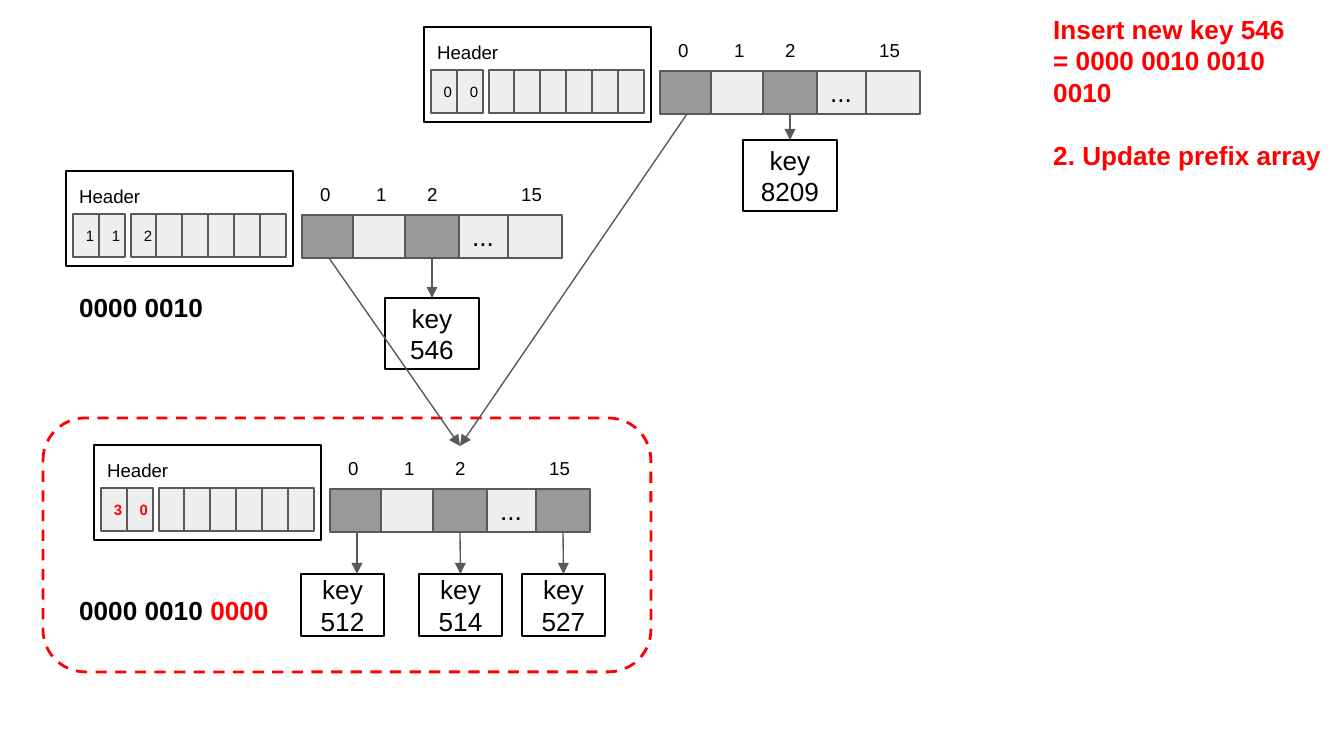
from lxml.etree import SubElement
from pptx import Presentation
from pptx.dml.color import RGBColor
from pptx.enum.dml import MSO_LINE
from pptx.enum.shapes import MSO_CONNECTOR, MSO_SHAPE
from pptx.enum.text import MSO_ANCHOR, PP_ALIGN
from pptx.oxml.ns import qn
from pptx.util import Emu, Inches, Pt

C = {"black": "000000", "red": "FF0000", "edge": "595959",
     "empty": "EEEEEE", "used": "999999"}
INSET = Inches(0.1)
FRAME = {"word_wrap": True, "margin_left": INSET, "margin_right": INSET,
         "margin_top": INSET, "margin_bottom": INSET}


def px(n):
    return Emu(round(n * 914400 / 134.4))


def box(at, paras=(), size=14, color="black", bold=False, fill=None,
        line=None, center=False, shape=MSO_SHAPE.RECTANGLE):
    """Add a shape, or a text box when it has no line; paras hold (text, color) runs."""
    at = [px(n) for n in at]
    if line:
        sp = s.shapes.add_shape(shape, *at)
        sp.shadow.inherit = False
        sp.line.color.rgb = RGBColor.from_string(C[line])
        sp.line.width = Pt(0.75)
        if fill:
            sp.fill.solid()
            sp.fill.fore_color.rgb = RGBColor.from_string(C[fill])
        else:
            sp.fill.background()
    else:
        sp = s.shapes.add_textbox(*at)
    tf = sp.text_frame
    for name, value in FRAME.items():
        setattr(tf, name, value)
    tf.vertical_anchor = MSO_ANCHOR.MIDDLE if center else MSO_ANCHOR.TOP
    for i, para in enumerate(paras):
        p = tf.add_paragraph() if i else tf.paragraphs[0]
        p.alignment = PP_ALIGN.CENTER if center else PP_ALIGN.LEFT
        for text, run_color in [(para, color)] if isinstance(para, str) else para:
            r = p.add_run()
            r.text = text
            for name, value in {"name": "Arial", "size": Pt(size), "bold": bold}.items():
                setattr(r.font, name, value)
            r.font.color.rgb = RGBColor.from_string(C[run_color])
    return sp


prs = Presentation()
prs.slide_width, prs.slide_height = px(1344), px(756)
s = prs.slides.add_slide(prs.slide_layouts[6])

highlight = box((43, 418, 608, 254), line="red", shape=MSO_SHAPE.ROUNDED_RECTANGLE)
highlight.line.width = Pt(1.5)
highlight.line.dash_style = MSO_LINE.DASH

# Tree nodes: left, top, counters, prefix, counter colour, slots in use
NODES = {
    "root": (424, 27, "00", "", "black", (0, 2)),
    "middle": (66, 171, "11", "2", "black", (0, 2)),
    "leaf": (94, 445, "30", "", "red", (0, 2, 4)),
}
# Index labels: slot -> text, offset from the node, width
LABELS = {0: ("0", 241, 36), 1: ("1", 297, 36), 2: ("2", 348, 36), 4: ("15", 442, 54)}
slots, labels = {}, {}
for node, (x, y, counters, prefix, color, used) in NODES.items():
    box((x, y, 227, 95), ["Header"], size=10, line="black")
    for i, text in enumerate(counters):
        box((x + 7 + 26 * i, y + 43, 26, 43), [text], size=8, color=color,
            bold=color == "red", fill="empty", line="edge", center=True)
    for i, text in enumerate(prefix.ljust(6)):
        box((x + 65 + 129 * i // 5, y + 43, 26, 43), [text] if text.strip() else [],
            size=8, fill="empty", line="edge", center=True)
    for i in (3, 0, 1, 2, 4):  # the ellipsis lies beneath its neighbours
        slots[node, i] = box((x + 236 + 103 * i // 2, y + 44, 54, 43),
                             ["..."] if i == 3 else [], line="edge", center=True,
                             fill="used" if i in used else "empty")
    for i, (text, dx, width) in LABELS.items():
        labels[node, i] = box((x + dx, y + 1, width, 43), [text], size=10)

# Keys: slot they hang from, left, top, width, height
KEYS = {
    "8209": (("root", 2), 743, 140, 94, 71),
    "546": (("middle", 2), 385, 298, 94, 71),
    "512": (("leaf", 0), 301, 574, 83, 62),
    "514": (("leaf", 2), 419, 574, 83, 62),
    "527": (("leaf", 4), 522, 574, 83, 62),
}
arrows = [(slots["root", 0], labels["leaf", 2]), (slots["middle", 0], labels["leaf", 2])]
for key, (slot, *at) in KEYS.items():
    arrows.append((slots[slot], box(at, ["key", key], line="black", center=True)))

for start, end in arrows:
    x, y = start.left + start.width // 2, start.top + start.height
    middle = end.left + end.width // 2
    joined = abs(middle - x) < px(3) or end.top - y > px(50)
    c = s.shapes.add_connector(MSO_CONNECTOR.STRAIGHT, x, y, x, end.top)
    c.begin_connect(start, 2)
    if joined:
        c.end_connect(end, 0)
    c.line.color.rgb = RGBColor.from_string(C["edge"])
    c.line.width = Pt(0.75)
    SubElement(c.line._get_or_add_ln(), qn("a:tailEnd"), type="triangle")
    SubElement(c._element.spPr, qn("a:effectLst"))

box((66, 278, 222, 48), ["0000 0010"], bold=True)
box((66, 581, 222, 48), [[("0000 0010 ", "black"), ("0000", "red")]], bold=True)
note = box((1040, 0, 304, 85), ["Insert new key 546", "= 0000 0010 0010 0010",
                                "2. Update prefix array"], color="red", bold=True)
note.text_frame.paragraphs[2].space_before = Pt(17)

prs.save("out.pptx")
